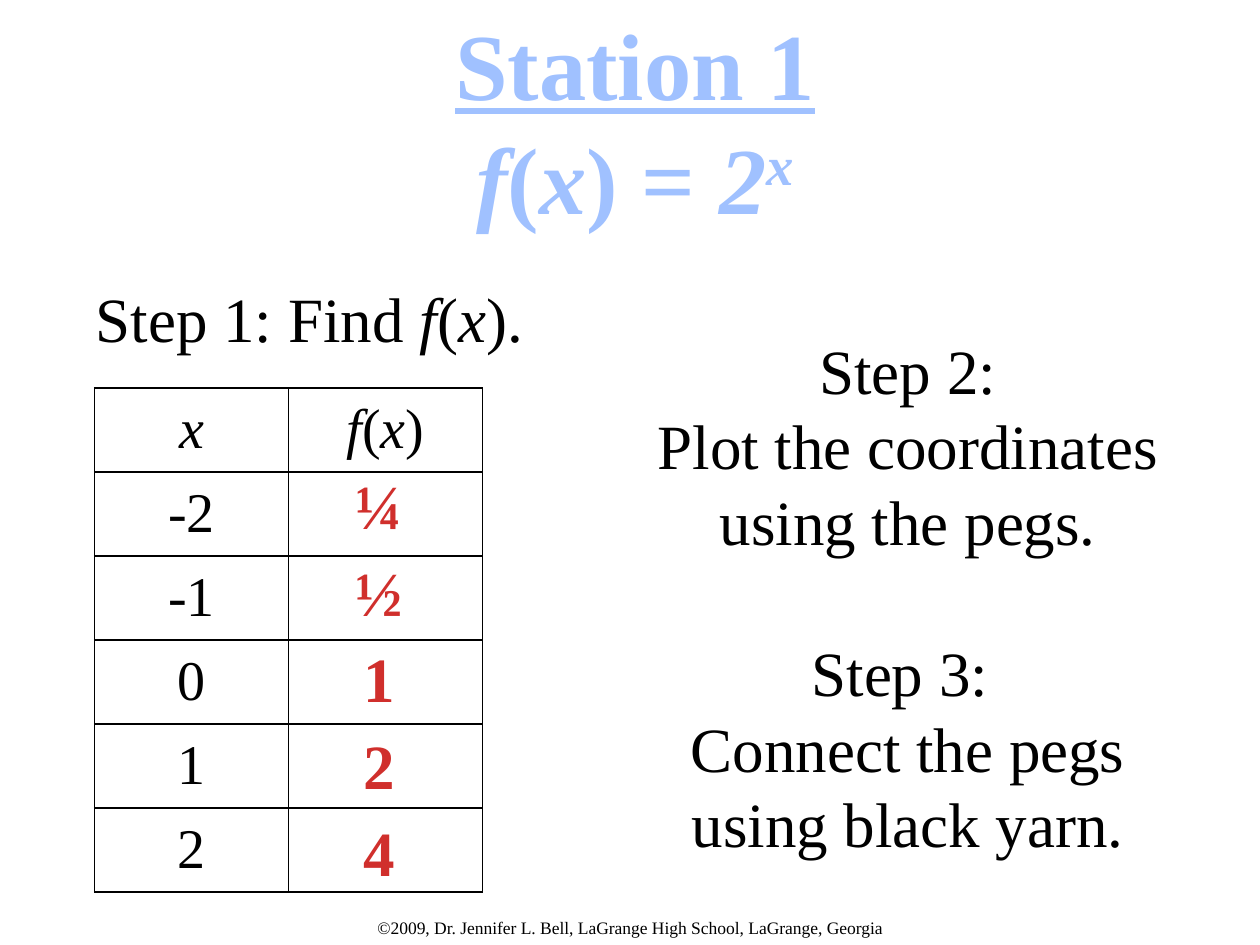
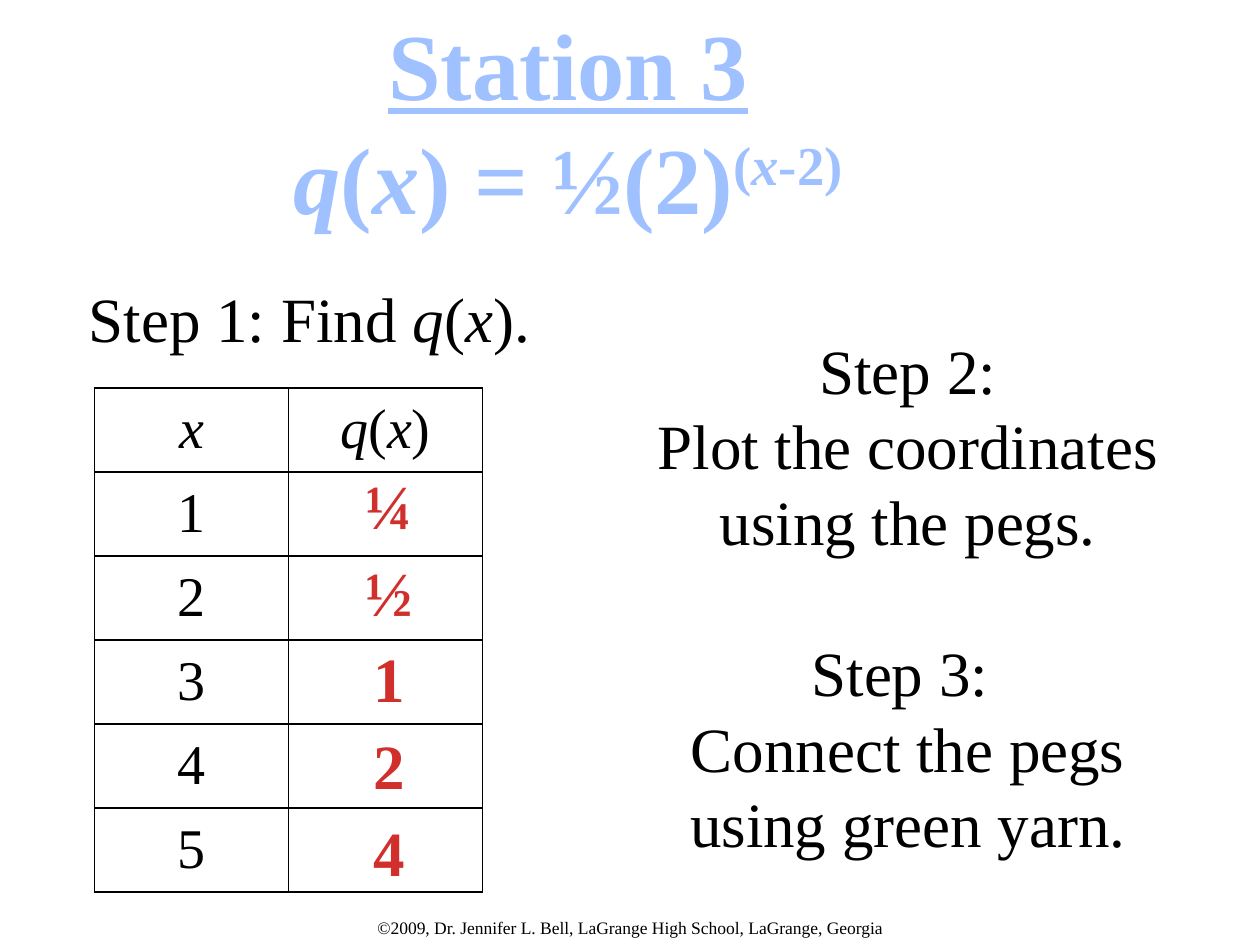
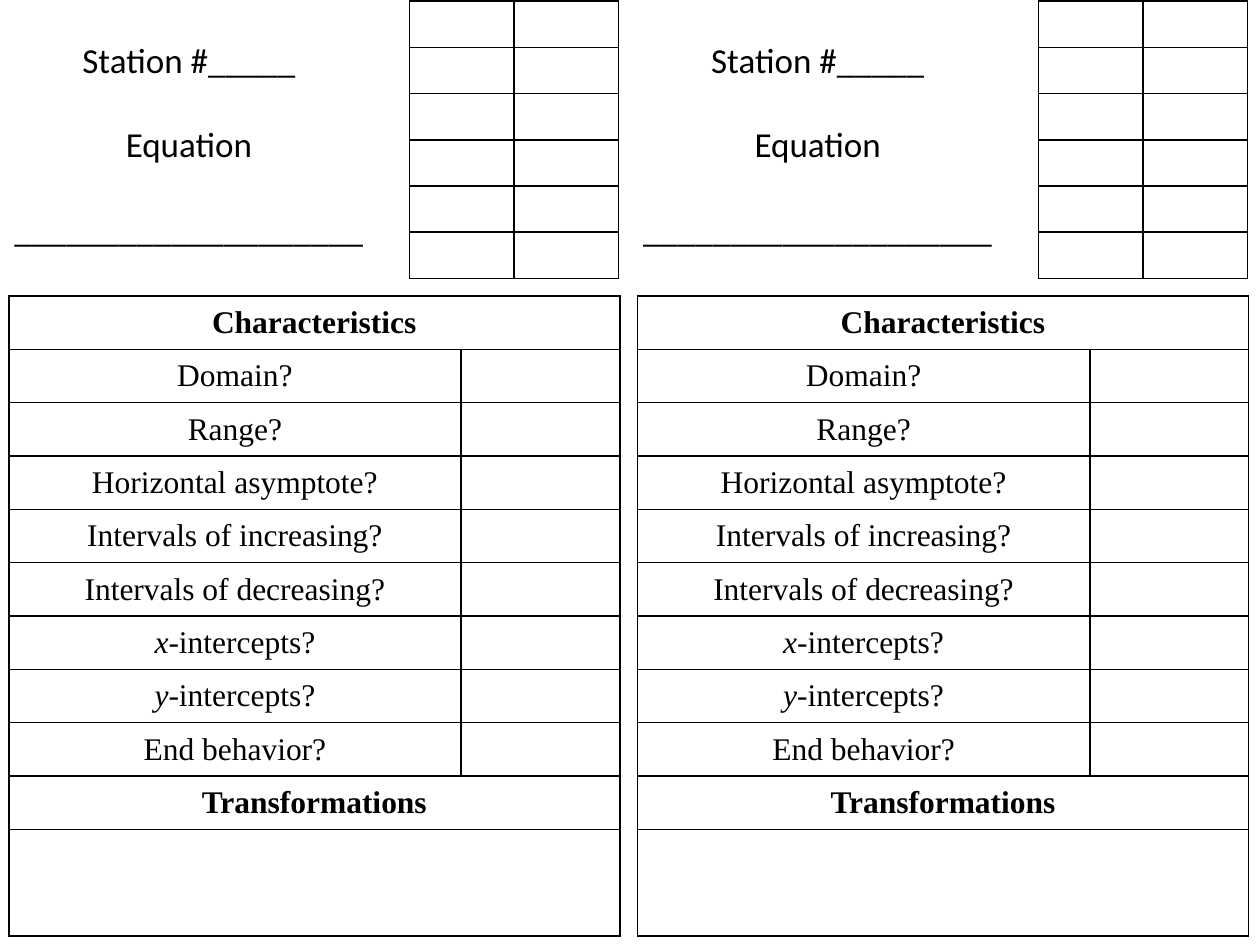
from lxml import etree
from pptx import Presentation
from pptx.dml.color import RGBColor
from pptx.enum.text import MSO_ANCHOR, MSO_AUTO_SIZE, PP_ALIGN
from pptx.oxml.ns import qn
from pptx.util import Inches, Pt

CENTER = PP_ALIGN.CENTER
MIDDLE = MSO_ANCHOR.MIDDLE
GROW = MSO_AUTO_SIZE.SHAPE_TO_FIT_TEXT

SERIF = "Times New Roman"
SANS = "Calibri"
BLACK = "000000"
TITLE_OUTLINE = "467AB8"
TITLE_STOPS = [(0, "BFD3F9"), (9, "A0C1FF"), (50, "003D85"), (79, "A0C1FF"), (100, "BFD3F9")]
ANSWER_STOPS = [(0, "FC7C7A"), (75, "D02F2C"), (100, "C70500")]
FOOTER = "©2009, Dr. Jennifer L. Bell, LaGrange High School, LaGrange, Georgia"
ANSWERS = ["¼", "½", "1", "2", "4"]
CHARACTERISTICS = [
    "Domain?", "Range?", "Horizontal asymptote?", "Intervals of increasing?",
    "Intervals of decreasing?", "*x*-intercepts?", "*y*-intercepts?", "End behavior?",
]


def rgb(value):
    return RGBColor.from_string(value)


def line_xml(tag, color, width):
    ln = etree.Element(qn(tag), w=str(Pt(width)))
    fill = etree.SubElement(ln, qn("a:solidFill"))
    etree.SubElement(fill, qn("a:srgbClr"), val=color)
    return ln


def gradient_xml(stops):
    grad = etree.Element(qn("a:gradFill"))
    stop_list = etree.SubElement(grad, qn("a:gsLst"))
    for percent, color in stops:
        gs = etree.SubElement(stop_list, qn("a:gs"), pos=str(percent * 1000))
        etree.SubElement(gs, qn("a:srgbClr"), val=color)
    etree.SubElement(grad, qn("a:lin"), ang="5400000", scaled="0")
    return grad


class Deck:
    def __init__(self):
        self.prs = Presentation()
        self.prs.slide_width = Inches(10)
        self.prs.slide_height = Inches(7.5)

    def new_slide(self):
        self.s = self.prs.slides.add_slide(self.prs.slide_layouts[6])

    def set_lines(self, tf, lines, size, font=SERIF, bold=False, stops=None, gaps=()):
        for i, line in enumerate(lines):
            p = tf.paragraphs[0] if i == 0 else tf.add_paragraph()
            p.alignment = CENTER
            if i in gaps:
                p.space_before = Pt(size * 1.2)
            for level, part in enumerate(line.split("^")):
                for j, piece in enumerate(part.split("*")):
                    if piece:
                        self.run(p, piece, size, font, bold, j % 2 == 1, level, stops)

    def run(self, p, text, size, font, bold, italic, level, stops):
        r = p.add_run()
        r.text = text
        r.font.size = Pt(size)
        r.font.name = font
        r.font.bold = bold
        r.font.italic = italic
        props = r.font._element
        if level:
            props.set("baseline", "30000")
        if stops:
            props.insert(0, gradient_xml(stops))
        else:
            r.font.color.rgb = rgb(BLACK)

    def text(self, left, top, width, height, lines, size, wrap=True, **style):
        box = self.s.shapes.add_textbox(Inches(left), Inches(top), Inches(width), Inches(height))
        tf = box.text_frame
        tf.word_wrap = wrap
        tf.auto_size = GROW
        self.set_lines(tf, lines, size, **style)
        return tf

    def title(self, center, width, lines):
        tf = self.text(center - width / 2, 0, width, 1.92, lines, 54,
                       wrap=False, bold=True, stops=TITLE_STOPS)
        for i, p in enumerate(tf.paragraphs):
            for r in p.runs:
                r.font.underline = i == 0
                r.font._element.insert(0, line_xml("a:ln", TITLE_OUTLINE, 0.83))

    def table(self, left, top, widths, heights):
        frame = self.s.shapes.add_table(len(heights), len(widths), Inches(left), Inches(top),
                                        Inches(sum(widths)), Inches(sum(heights)))
        table = frame.table
        table.first_row = table.horz_banding = False
        for column, width in zip(table.columns, widths):
            column.width = Inches(width)
        for row, height in zip(table.rows, heights):
            row.height = Inches(height)
        for cell in table.iter_cells():
            cell.vertical_anchor = MIDDLE
            cell.margin_top = cell.margin_bottom = 0
            cell.fill.background()
            props = cell._tc.get_or_add_tcPr()
            for i, tag in enumerate(("a:lnL", "a:lnR", "a:lnT", "a:lnB")):
                props.insert(i, line_xml(tag, BLACK, 1))
        return table

    def cell(self, table, row, column, text, size, bold=False):
        self.set_lines(table.cell(row, column).text_frame, [text], size, bold=bold)

    def station(self, number, name, formula, title_center, title_width, inputs,
                answer_center, yarn):
        self.new_slide()
        function = f"*{name}*(*x*)"
        self.title(title_center, title_width, [f"Station {number}", f"{function} = {formula}"])
        self.text(0.33, 2.17, 4.25, 0.71, [f"Step 1: Find {function}."], 36)
        table = self.table(0.75, 3.08, [1.54] * 2, [4 / 6] * 6)
        self.cell(table, 0, 1, function, 32)
        for row, value in enumerate(["*x*"] + inputs):
            self.cell(table, row, 0, value, 32)
        steps = ["Step 2:", "Plot the coordinates using the pegs.",
                 "Step 3: ", f"Connect the pegs using {yarn} yarn."]
        self.text(5.08, 2.58, 4.25, 4.34, steps, 36, gaps=(2,))
        for i, answer in enumerate(ANSWERS):
            self.text(answer_center - 0.32, 3.65 + 0.69 * i, 0.64, 0.71, [answer], 36,
                      wrap=False, bold=True, stops=ANSWER_STOPS)
        self.text(0, 7.23, 10, 0.27, [FOOTER], 10)

    def worksheet(self, left):
        unit = 5.08 / 12
        table = self.table(left + 0.07, 2.35, [3.59, 1.26], [unit] * 10 + [2 * unit])
        for row in (0, 9, 10):
            table.cell(row, 0).merge(table.cell(row, 1))
        self.cell(table, 0, 0, "Characteristics", 18, bold=True)
        for row, question in enumerate(CHARACTERISTICS, 1):
            self.cell(table, row, 0, question, 18)
        self.cell(table, 9, 0, "Transformations", 18, bold=True)
        self.text(left, 0.26, 3, 1.78, ["Station #_____", "Equation", "_" * 20], 20,
                  font=SANS, gaps=(1, 2))
        self.table(left + 3.25, 0.01, [0.83] * 2, [2.2 / 6] * 6)


def main():
    deck = Deck()
    deck.station(1, "f", "*2*^*x*", 5.04, 3.08, ["-2", "-1", "0", "1", "2"], 3.01, "black")
    deck.station(3, "q", "½(2)^(*x*-2)", 4.51, 4.74, ["1", "2", "3", "4", "5"], 3.09, "green")
    deck.new_slide()
    for left in (0, 4.99):
        deck.worksheet(left)
    deck.prs.save("out.pptx")


if __name__ == "__main__":
    main()
